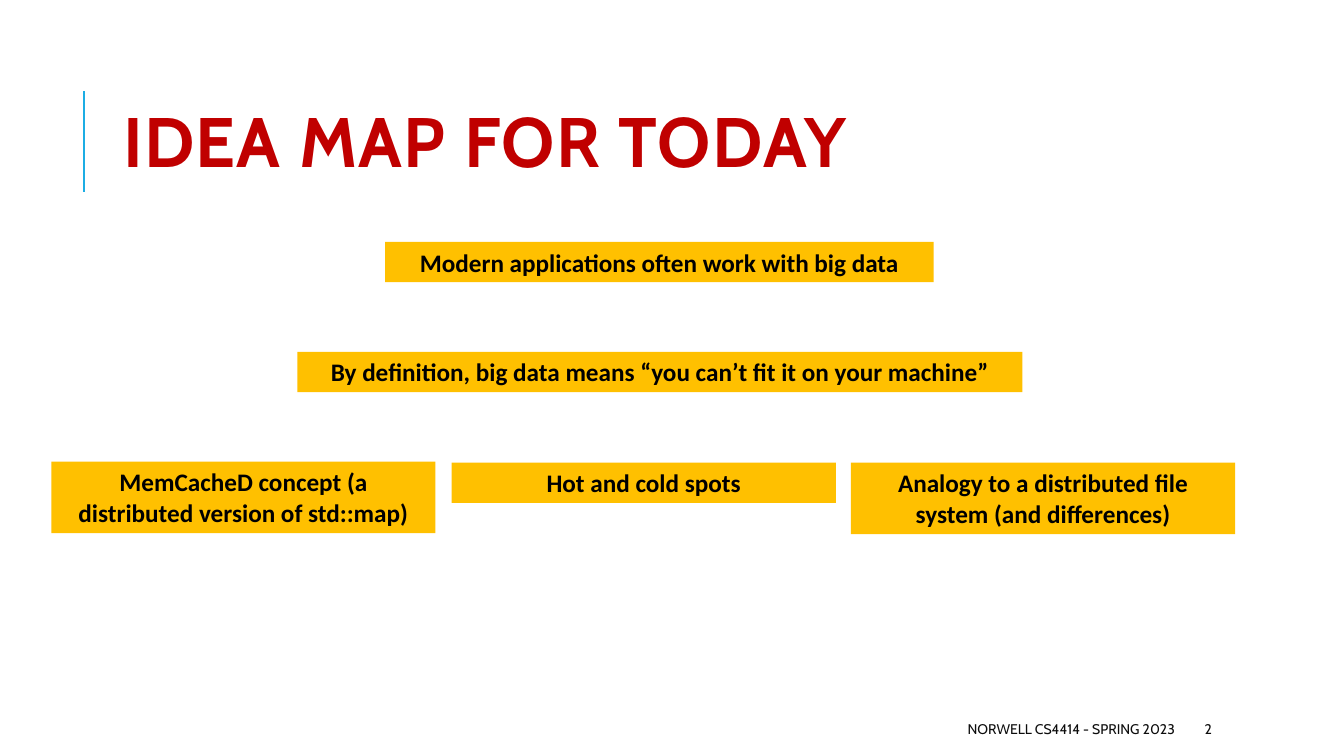
"""Build the idea map slide for a lecture on big data."""
from lxml import etree
from pptx import Presentation
from pptx import util as u
from pptx.dml.color import RGBColor
from pptx.enum import shapes, text
from pptx.oxml.ns import qn

COLORS = {
    "accent": "1CADE4",
    "title": "C00000",
    "footer": "0D0D0D",
    "idea": "FFC000",
    "ink": "000000",
}
IDEA_WIDTH = 3.81
IDEAS = [
    ("Modern applications often work with big data", 3.82, 2.4, 5.44, 0.4),
    ("By definition, big data means “you can’t fit it on your machine”",
     2.95, 3.49, 7.19, 0.4),
    ("MemCacheD concept (a distributed version of std::map)",
     0.51, 4.58, IDEA_WIDTH, 0.71),
    ("Hot and cold spots", 4.48, 4.59, IDEA_WIDTH, 0.4),
    ("Analogy to a distributed file system (and differences)",
     8.44, 4.59, IDEA_WIDTH, 0.71),
]


def color(name):
    return RGBColor.from_string(COLORS[name])


def write(sp, words, font, size, ink, align, bold=False):
    tf = sp.text_frame
    tf.word_wrap = True
    p = tf.paragraphs[0]
    p.alignment = align
    r = p.add_run()
    r.text = words
    r.font.name = font
    r.font.size = u.Pt(size)
    r.font.bold = bold
    r.font.color.rgb = color(ink)
    return r


def add_title(s, words):
    sp = s.shapes.title
    sp.left, sp.top = u.Inches(1.12), u.Inches(0.64)
    sp.width, sp.height = u.Inches(11.8), u.Inches(1.64)
    r = write(sp, words, "Cabin", 50, "title", text.PP_ALIGN.LEFT, True)
    r.font._element.set("spc", "100")
    tf = sp.text_frame
    tf.auto_size = text.MSO_AUTO_SIZE.NONE
    tf.vertical_anchor = text.MSO_ANCHOR.MIDDLE
    tf.paragraphs[0].line_spacing = 0.8


def add_rule(s, x, top, bottom):
    line = s.shapes.add_connector(
        shapes.MSO_CONNECTOR.STRAIGHT,
        u.Inches(x), u.Inches(bottom), u.Inches(x), u.Inches(top))
    line.line.color.rgb = color("accent")
    line.line.width = u.Pt(1.5)
    etree.SubElement(line._element.spPr, qn("a:effectLst"))


def add_footer(s, words, left, width, align):
    sp = s.shapes.add_textbox(
        u.Inches(left), u.Inches(7.08), u.Inches(width), u.Inches(0.3))
    write(sp, words, "Cabin", 10, "footer", align)
    sp.text_frame.vertical_anchor = text.MSO_ANCHOR.MIDDLE


def add_idea(s, words, left, top, width, height):
    sp = s.shapes.add_shape(
        shapes.MSO_SHAPE.RECTANGLE,
        u.Inches(left), u.Inches(top), u.Inches(width), u.Inches(height))
    sp.shadow.inherit = False
    sp.fill.solid()
    sp.fill.fore_color.rgb = color("idea")
    sp.line.fill.background()
    write(sp, words, "Calibri", 18, "ink", text.PP_ALIGN.CENTER, True)
    sp.text_frame.vertical_anchor = text.MSO_ANCHOR.TOP
    sp.text_frame.auto_size = text.MSO_AUTO_SIZE.SHAPE_TO_FIT_TEXT


def main():
    prs = Presentation()
    prs.slide_width, prs.slide_height = u.Inches(13.33), u.Inches(7.5)
    s = prs.slides.add_slide(prs.slide_layouts[5])
    add_rule(s, 0.83, 0.9, 1.9)
    add_title(s, "IDEA MAP FOR TODAY")
    add_footer(s, "NORWELL CS4414 - SPRING 2023", 5.3, 6.45, text.PP_ALIGN.RIGHT)
    add_footer(s, "2", 11.85, 1.06, text.PP_ALIGN.LEFT)
    for idea in IDEAS:
        add_idea(s, *idea)
    prs.save("out.pptx")


if __name__ == "__main__":
    main()
